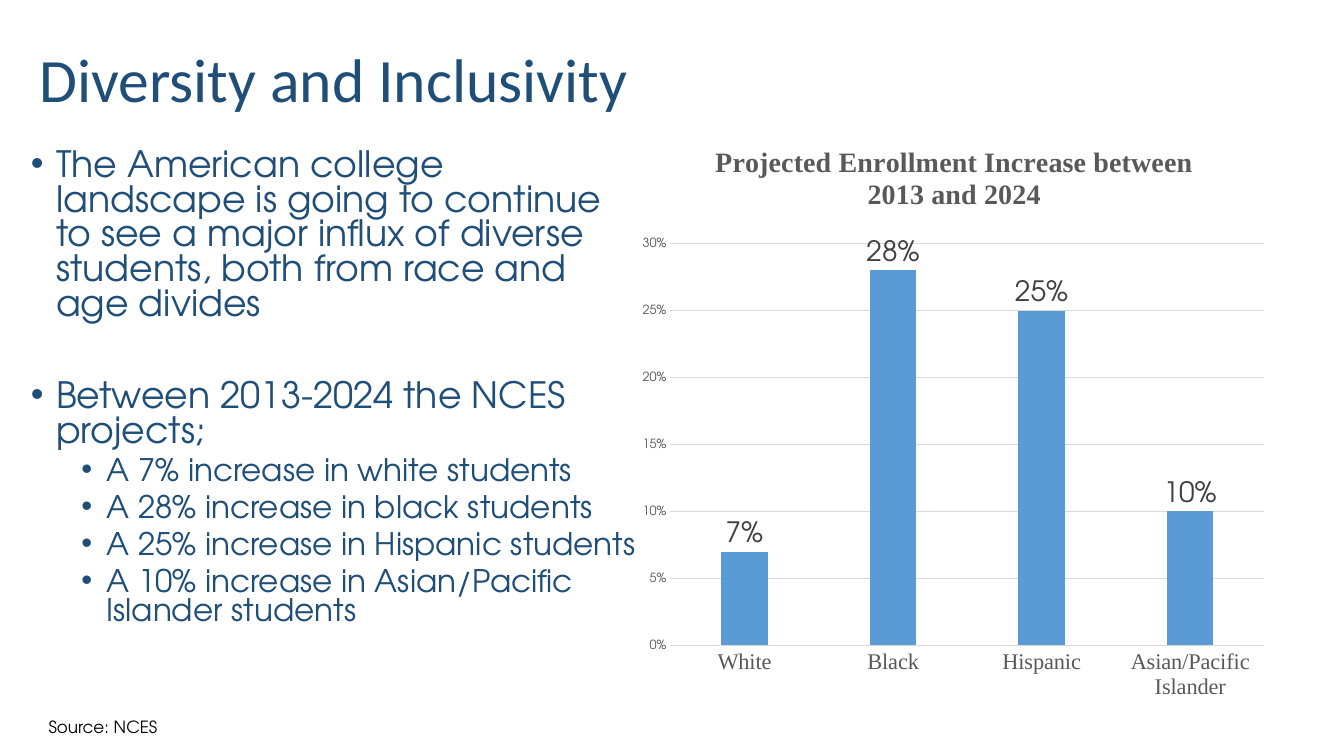
"""Build the Diversity and Inclusivity slide with its enrollment chart."""
from lxml import etree
from pptx import Presentation
from pptx.chart.data import CategoryChartData
from pptx.dml.color import RGBColor
from pptx.enum.chart import XL_CHART_TYPE, XL_LABEL_POSITION, XL_TICK_MARK
from pptx.enum.text import MSO_ANCHOR, PP_ALIGN
from pptx.oxml import parse_xml
from pptx.oxml.ns import nsdecls, qn
from pptx.util import Inches, Pt

COLUMN = XL_CHART_TYPE.COLUMN_CLUSTERED
OUTSIDE = XL_LABEL_POSITION.OUTSIDE_END
NO_TICK = XL_TICK_MARK.NONE
TOP = MSO_ANCHOR.TOP
LEFT = PP_ALIGN.LEFT

COLORS = {"navy": "1F4E79", "black": "000000", "gray": "595959",
          "label": "404040", "grid": "D9D9D9", "bar": "5B9BD5"}
SANS, SERIF, HEADING = "TeX Gyre Adventor", "Times New Roman", "Calibri"
GRID_COLUMNS, GRID_ROWS = 160, 90

STATEMENTS = [
    ("The American college landscape is going to continue to see a major influx "
     "of diverse students, both from race and age divides", 0, 0),
    ("Between 2013-2024 the NCES projects;", 0, 41),
    ("A 7% increase in white students", 1, 5),
    ("A 28% increase in black students", 1, 5),
    ("A 25% increase in Hispanic students", 1, 5),
    ("A 10% increase in Asian/Pacific Islander students", 1, 5),
]
LEVEL_SIZES = (25.9, 22.2)
LEVEL_INDENTS = (0.25, 0.75)
ENROLLMENT = {"White": 0.07, "Black": 0.28, "Hispanic": 0.25,
              "Asian/Pacific Islander": 0.1}
PLOT_AREA = {"x": 0.07, "y": 0.2, "w": 0.9, "h": 0.66}


def style_font(font, size, name, color, bold=False):
    font.size, font.name, font.bold = Pt(size), name, bold
    font.color.rgb = RGBColor.from_string(COLORS[color])


def write(paragraph, text, *, size, name, color, bold=False, align=None,
          spacing=None, before=0, bullet_level=None):
    if bullet_level is not None:
        paragraph.level = bullet_level
        properties = paragraph._p.get_or_add_pPr()
        properties.set("marL", str(Inches(LEVEL_INDENTS[bullet_level])))
        properties.set("indent", str(-Inches(0.25)))
        etree.SubElement(properties, qn("a:buFont"), typeface="Arial")
        etree.SubElement(properties, qn("a:buChar"), char="•")
    paragraph.alignment = align
    paragraph.line_spacing = spacing
    paragraph.space_before = Pt(before)
    run = paragraph.add_run()
    run.text = text
    style_font(run.font, size, name, color, bold)


class SlideBuilder:
    def __init__(self):
        self.deck = Presentation()
        self.deck.slide_width, self.deck.slide_height = Inches(13.33), Inches(7.5)
        self.slide = self.deck.slides.add_slide(self.deck.slide_layouts[5])

    def cells(self, column, row, columns, rows):
        across = self.deck.slide_width / GRID_COLUMNS
        down = self.deck.slide_height / GRID_ROWS
        return (round(column * across), round(row * down),
                round(columns * across), round(rows * down))

    def title(self, text, *area):
        heading = self.slide.shapes.title
        heading.left, heading.top, heading.width, heading.height = self.cells(*area)
        heading.text_frame.vertical_anchor = TOP
        write(heading.text_frame.paragraphs[0], text, size=44, name=HEADING,
              color="navy", align=LEFT)

    def text_frame(self, *area):
        frame = self.slide.shapes.add_textbox(*self.cells(*area)).text_frame
        frame.word_wrap = True
        return frame

    def bullets(self, statements, *area):
        frame = self.text_frame(*area)
        for index, (text, level, before) in enumerate(statements):
            paragraph = frame.add_paragraph() if index else frame.paragraphs[0]
            write(paragraph, text, size=LEVEL_SIZES[level], name=SANS, color="navy",
                  spacing=0.8, before=before, bullet_level=level)

    def source(self, text, *area):
        write(self.text_frame(*area).paragraphs[0], text, size=12, name=SANS,
              color="black")

    def column_chart(self, heading, values, *area):
        data = CategoryChartData(number_format="0%")
        data.categories = list(values)
        data.add_series("Series 1", list(values.values()))
        chart = self.slide.shapes.add_chart(COLUMN, *self.cells(*area), data).chart
        style_font(chart.font, 10, SANS, "black")
        chart.has_legend = False
        chart.has_title = True
        write(chart.chart_title.text_frame.paragraphs[0], heading, size=20,
              name=SERIF, color="gray", bold=True)
        self.axes(chart)
        self.columns(chart.plots[0])
        self.place_plot(chart)

    def axes(self, chart):
        groups, shares = chart.category_axis, chart.value_axis
        for axis, size, name in ((groups, 16, SERIF), (shares, 9, SANS)):
            axis.major_tick_mark = axis.minor_tick_mark = NO_TICK
            style_font(axis.tick_labels.font, size, name, "gray")
        shares.minimum_scale, shares.maximum_scale, shares.major_unit = 0, 0.3, 0.05
        shares.tick_labels.number_format = "0%"
        shares.tick_labels.number_format_is_linked = False
        shares.format.line.fill.background()
        for line in (groups.format.line, shares.major_gridlines.format.line):
            line.color.rgb = RGBColor.from_string(COLORS["grid"])
            line.width = Pt(0.75)

    def columns(self, plot):
        plot.gap_width, plot.overlap, plot.vary_by_categories = 219, -27, False
        fill = plot.series[0].format.fill
        fill.solid()
        fill.fore_color.rgb = RGBColor.from_string(COLORS["bar"])
        plot.has_data_labels = True
        labels = plot.data_labels
        labels.show_value, labels.position = True, OUTSIDE
        labels.number_format, labels.number_format_is_linked = "0%", False
        style_font(labels.font, 20, SANS, "label")

    def place_plot(self, chart):
        plot_area = chart._chartSpace.chart.plotArea
        for automatic in plot_area.findall(qn("c:layout")):
            plot_area.remove(automatic)
        modes = '<c:xMode val="edge"/><c:yMode val="edge"/>'
        sizes = "".join(f'<c:{side} val="{share}"/>' for side, share in PLOT_AREA.items())
        plot_area.insert(0, parse_xml(
            f'<c:layout {nsdecls("c")}><c:manualLayout><c:layoutTarget val="inner"/>'
            f"{modes}{sizes}</c:manualLayout></c:layout>"))


def main():
    builder = SlideBuilder()
    builder.bullets(STATEMENTS, 2.5, 17.2, 75.2, 64.2)
    builder.source("Source: NCES", 4.6, 84.7, 18.1, 3.6)
    builder.column_chart("Projected Enrollment Increase between 2013 and 2024",
                         ENROLLMENT, 74.3, 14.5, 78.6, 72.5)
    builder.title("Diversity and Inclusivity", 3.5, 4.3, 138, 17.4)
    builder.deck.save("out.pptx")


if __name__ == "__main__":
    main()
